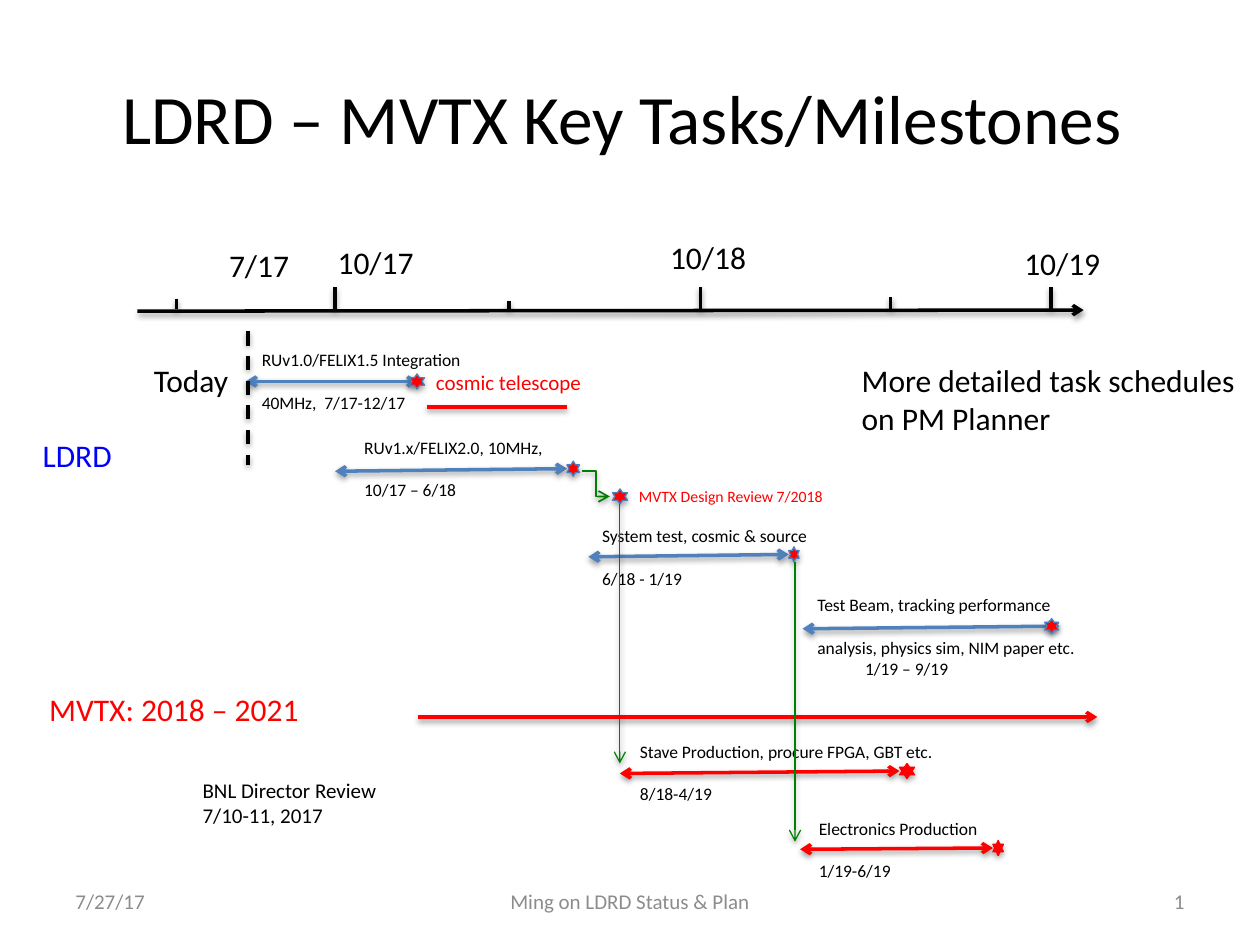
"""Build the key tasks and milestones timeline slide."""
from dataclasses import dataclass

from lxml import etree
from pptx import Presentation
from pptx.dml.color import RGBColor
from pptx.enum import dml, shapes, text
from pptx.oxml import ns
from pptx.util import Pt


@dataclass(frozen=True)
class Theme:
    font: str = "Calibri"
    black: str = "000000"
    red: str = "FF0000"
    blue: str = "0000FF"
    bar: str = "4F81BD"
    edge: str = "4B7EBC"
    green: str = "008000"
    grey: str = "8C8C8C"
    title: float = 39.6
    large: float = 18
    medium: float = 12
    small: float = 10
    tiny: float = 9
    thick: float = 2
    thin: float = 0.75
    gap: float = 12.2
    star_height: float = 8.6


class Deck:
    def __init__(self, theme):
        self.theme = theme
        self.presentation = Presentation()
        self.presentation.slide_width = Pt(720)
        self.presentation.slide_height = Pt(540)
        self.page = self.presentation.slides.add_slide(self.presentation.slide_layouts[5])

    def style(self, frame, size, color, align):
        for para in frame.paragraphs:
            para.alignment = align
            for span in para.runs:
                span.font.name = self.theme.font
                span.font.size = Pt(size)
                span.font.color.rgb = RGBColor.from_string(color)

    def title(self, words, left, top, width, height):
        box = self.page.shapes.title
        box.left, box.top, box.width, box.height = map(Pt, (left, top, width, height))
        frame = box.text_frame
        frame.text = words
        frame.auto_size = text.MSO_AUTO_SIZE.NONE
        frame.vertical_anchor = text.MSO_ANCHOR.MIDDLE
        self.style(frame, self.theme.title, self.theme.black, text.PP_ALIGN.CENTER)

    def label(self, words, left, top, width, height, size, color,
              align=text.PP_ALIGN.LEFT, anchor=text.MSO_ANCHOR.TOP):
        box = self.page.shapes.add_textbox(*map(Pt, (left, top, width, height)))
        frame = box.text_frame
        frame.word_wrap = True
        frame.vertical_anchor = anchor
        frame.text = words
        self.style(frame, size, color, align)
        return frame

    def line(self, start, end, color, width, head=False, tail=False, dash=False,
             kind=shapes.MSO_CONNECTOR.STRAIGHT):
        connector = self.page.shapes.add_connector(kind, *map(Pt, (*start, *end)))
        connector.line.color.rgb = RGBColor.from_string(color)
        connector.line.width = Pt(width)
        if dash:
            connector.line.dash_style = dml.MSO_LINE.DASH
        outline = connector.line._get_or_add_ln()
        for tag, wanted in (("a:headEnd", head), ("a:tailEnd", tail)):
            if wanted:
                etree.SubElement(outline, ns.qn(tag), type="arrow")

    def star(self, left, top, width, edge):
        star = self.page.shapes.add_shape(
            shapes.MSO_SHAPE.STAR_6_POINT,
            *map(Pt, (left, top, width, self.theme.star_height)))
        star.fill.solid()
        star.fill.fore_color.rgb = RGBColor.from_string(self.theme.red)
        star.line.color.rgb = RGBColor.from_string(edge)
        star.line.width = Pt(self.theme.thin)

    def task(self, words, left, top, width, start, end, star_left, star_width,
             color, edge, indent=0):
        theme = self.theme
        self.line(start, end, color, theme.thick, head=True, tail=True)
        self.star(star_left, end[1] - theme.star_height / 2, star_width, edge)
        frame = self.label(words, left, top, width, 44, theme.small, theme.black)
        frame.paragraphs[1].space_before = Pt(theme.gap)
        if indent:
            frame.paragraphs[-1]._p.get_or_add_pPr().set("marL", str(Pt(indent)))

    def save(self):
        self.presentation.save("out.pptx")


def main():
    theme = Theme()
    deck = Deck(theme)
    deck.title("LDRD – MVTX Key Tasks/Milestones ", 36, 21.6, 648, 90)

    ldrd = (theme.bar, theme.edge)
    mvtx = (theme.red, theme.red)
    tasks = [
        ("RUv1.0/FELIX1.5 Integration\n40MHz,  7/17-12/17", 142.5, 196, 159,
         (140.4, 218), (239, 218), 234, 8.6, *ldrd),
        ("RUv1.x/FELIX2.0, 10MHz,\n10/17 – 6/18", 201, 246.2, 155.5,
         (191.5, 269.3), (324, 267.8), 324, 7.2, *ldrd),
        ("System test, cosmic & source\n6/18 - 1/19", 337, 296.6, 136,
         (336.2, 318.2), (450.7, 316.8), 450.7, 6, *ldrd),
        ("Stave Production, procure FPGA, GBT etc.\n8/18-4/19", 358.6, 419.8, 187,
         (354.2, 442), (514, 440.6), 514, 8.6, *mvtx),
        ("Electronics Production\n1/19-6/19", 460.8, 463.7, 124.6,
         (457.2, 485.3), (567.4, 484.6), 567.4, 6, *mvtx),
        ("Test Beam, tracking performance\nanalysis, physics sim, NIM paper etc.\n1/19 – 9/19",
         460, 336.2, 173, (458.6, 359.3), (605.5, 357.8), 597, 8, *ldrd, 27.2),
    ]
    for task in tasks:
        deck.task(*task)

    deck.star(350, 279.4, 8.6, theme.edge)
    deck.label("MVTX Design Review 7/2018", 358, 274.5, 123, 18, theme.tiny, theme.red)

    deck.line((78.5, 177.8), (619.2, 177.2), theme.black, theme.thick, tail=True)
    ticks = [(100.8, 170.6), (191.5, 164.2), (290.9, 172), (400.3, 164.2),
             (509, 170), (600.5, 164.2)]
    for across, top in ticks:
        deck.line((across, top), (across, 176.8), theme.black, theme.thick)

    headings = [
        ("7/17", 123.8, 137, 51, theme.black),
        ("10/17", 185.8, 135.4, 60, theme.black),
        ("10/18", 375.8, 132.5, 60, theme.black),
        ("10/19", 578.2, 136, 60, theme.black),
        ("LDRD", 17.3, 245.5, 57, theme.blue),
        ("MVTX: 2018 – 2021", 21, 391, 161, theme.red),
        ("Today", 80.8, 203, 62, theme.black),
        ("More detailed task schedules\non PM Planner", 485.3, 203, 233, theme.black),
    ]
    for words, left, top, width, color in headings:
        deck.label(words, left, top, width, 29, theme.large, color)

    deck.line((239, 409.7), (627, 409.7), theme.red, theme.thick, tail=True)
    deck.line((141.8, 189.4), (141.8, 265.7), theme.black, theme.thick, dash=True)
    deck.line((244, 232.6), (324, 232.6), theme.red, theme.thick)
    for across, top, bottom in ((354.2, 288, 436.3), (454.3, 321, 481)):
        deck.line((across, top), (across, bottom), theme.green, theme.thin, tail=True)
    deck.line((332.6, 269.3), (348.5, 283.7), theme.green, 1, tail=True,
              kind=shapes.MSO_CONNECTOR.ELBOW)

    deck.label("BNL Director Review\n7/10-11, 2017", 108.7, 440.6, 117, 36,
               theme.medium, theme.black)
    deck.label("cosmic telescope", 242, 207.4, 101, 22, theme.medium, theme.red)

    footers = [
        ("7/27/17", 36, 168, text.PP_ALIGN.LEFT),
        ("Ming on LDRD Status & Plan", 246, 228, text.PP_ALIGN.CENTER),
        ("1", 516, 168, text.PP_ALIGN.RIGHT),
    ]
    for words, left, width, align in footers:
        deck.label(words, left, 500.5, width, 28.8, theme.medium, theme.grey,
                   align, text.MSO_ANCHOR.MIDDLE)
    deck.save()


if __name__ == "__main__":
    main()
